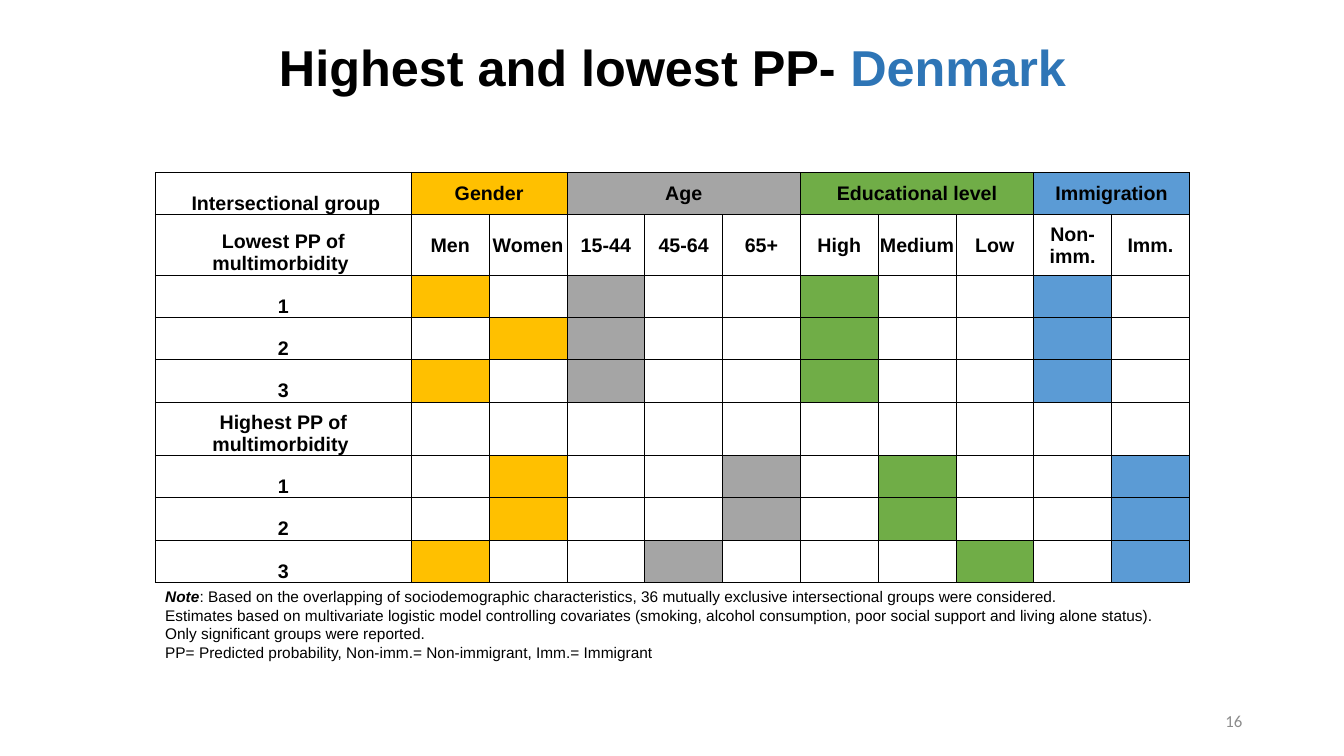
from lxml.etree import SubElement
from pptx import Presentation
from pptx.dml.color import RGBColor
from pptx.enum.text import MSO_ANCHOR, PP_ALIGN
from pptx.oxml.ns import qn
from pptx.util import Inches, Pt

COLOURS = {
    "black": "000000", "white": "FFFFFF", "country": "2E75B6", "number": "8C8C8C",
    "gender": "FFC000", "age": "A5A5A5", "education": "70AD47", "immigration": "5B9BD5",
}
TITLE = [[("Highest and lowest PP- ", {}), ("Denmark", {"colour": "country"})]]
PAGE_NUMBER = [[("16", {})]]
NOTE = [
    [("Note", {"bold": True, "italic": True}),
     (": Based on the overlapping of sociodemographic characteristics, "
      "36 mutually exclusive intersectional groups were considered.", {})],
    [("Estimates based on multivariate logistic model controlling covariates (smoking, "
      "alcohol consumption, poor social support and living alone status).", {})],
    [("Only significant groups were reported.", {})],
    [("PP= Predicted probability, Non-imm.= Non-immigrant, Imm.= Immigrant", {})],
]
CORNER = " Intersectional group"
DIMENSIONS = [
    ("Gender", "gender", ["Men", "Women"]),
    ("Age", "age", ["15-44", "45-64", "65+"]),
    ("Educational level", "education", ["High", "Medium", "Low"]),
    ("Immigration", "immigration", ["Non-imm.", "Imm."]),
]
# Row label, then the levels that describe the group
ROWS = [
    ("Lowest PP of multimorbidity ", ()),
    ("1", ("Men", "15-44", "High", "Non-imm.")),
    ("2", ("Women", "15-44", "High", "Non-imm.")),
    ("3", ("Men", "15-44", "High", "Non-imm.")),
    ("Highest PP of multimorbidity ", ()),
    ("1", ("Women", "65+", "Medium", "Imm.")),
    ("2", ("Women", "65+", "Medium", "Imm.")),
    ("3", ("Men", "45-64", "Low", "Imm.")),
]
LEVELS = [(level, colour) for _, colour, levels in DIMENSIONS for level in levels]

SLIDE_WIDTH, SLIDE_HEIGHT = 13.33, 7.5
LEFT, WIDTH = 1.54, 10.26
TABLE_TOP, LABEL_WIDTH = 1.71, 2.54
LEVEL_WIDTH = (WIDTH - LABEL_WIDTH) / len(LEVELS)
ROW_HEIGHT = 0.42
SECTION_HEIGHTS = {1: 0.6, 5: 0.53}
ROW_HEIGHTS = [SECTION_HEIGHTS.get(row, ROW_HEIGHT) for row in range(len(ROWS) + 1)]


def rgb(name):
    return RGBColor.from_string(COLOURS[name])


def write(frame, paragraphs, size, align=PP_ALIGN.LEFT, font="Arial", colour="black",
          bold=False, spacing=None):
    """Fill a text frame; each run may override colour, bold and italic."""
    for index, runs in enumerate(paragraphs):
        para = frame.add_paragraph() if index else frame.paragraphs[0]
        para.alignment = align
        para.line_spacing = spacing
        for text, look in runs:
            span = para.add_run()
            span.text = text
            span.font.name = font
            span.font.size = Pt(size)
            span.font.bold = look.get("bold", bold)
            span.font.italic = look.get("italic", False)
            span.font.color.rgb = rgb(look.get("colour", colour))


def add_text(page, place, paragraphs, anchor=MSO_ANCHOR.MIDDLE, **look):
    box = page.shapes.add_textbox(*(Inches(length) for length in place))
    box.text_frame.word_wrap = True
    box.text_frame.vertical_anchor = anchor
    write(box.text_frame, paragraphs, **look)


def add_borders(cell):
    properties = cell._tc.get_or_add_tcPr()
    for side in ("a:lnL", "a:lnR", "a:lnT", "a:lnB"):
        line = SubElement(properties, qn(side), w=str(Pt(0.5)))
        fill = SubElement(line, qn("a:solidFill"))
        SubElement(fill, qn("a:srgbClr"), val=COLOURS["black"])


def set_cell(cell, text="", colour="white", anchor=MSO_ANCHOR.MIDDLE):
    cell.fill.solid()
    cell.fill.fore_color.rgb = rgb(colour)
    cell.vertical_anchor = anchor
    cell.margin_left = cell.margin_right = cell.margin_top = Inches(0.01)
    cell.margin_bottom = 0
    if text:
        write(cell.text_frame, [[(text, {})]], size=14, align=PP_ALIGN.CENTER, bold=True)


def add_group_table(page):
    frame = page.shapes.add_table(
        len(ROW_HEIGHTS), len(LEVELS) + 1, Inches(LEFT), Inches(TABLE_TOP),
        Inches(WIDTH), Inches(sum(ROW_HEIGHTS)))
    table = frame.table
    table.first_row = table.horz_banding = False
    for index, column in enumerate(table.columns):
        column.width = Inches(LEVEL_WIDTH if index else LABEL_WIDTH)
    for row, height in zip(table.rows, ROW_HEIGHTS):
        row.height = Inches(height)
    for cell in table.iter_cells():
        add_borders(cell)
        set_cell(cell)

    set_cell(table.cell(0, 0), CORNER, anchor=MSO_ANCHOR.BOTTOM)
    first = 1
    for name, colour, levels in DIMENSIONS:
        last = first + len(levels) - 1
        table.cell(0, first).merge(table.cell(0, last))
        set_cell(table.cell(0, first), name, colour)
        first = last + 1
    for column, (level, _) in enumerate(LEVELS, 1):
        set_cell(table.cell(1, column), level)
    for row, (label, chosen) in enumerate(ROWS, 1):
        set_cell(table.cell(row, 0), label, anchor=MSO_ANCHOR.BOTTOM)
        for column, (level, colour) in enumerate(LEVELS, 1):
            if level in chosen:
                set_cell(table.cell(row, column), colour=colour)


def main():
    deck = Presentation()
    deck.slide_width, deck.slide_height = Inches(SLIDE_WIDTH), Inches(SLIDE_HEIGHT)
    page = deck.slides.add_slide(deck.slide_layouts[6])
    add_text(page, (LEFT, 0.13, WIDTH, 1.13), TITLE, size=36, bold=True,
             align=PP_ALIGN.CENTER, spacing=0.9)
    add_text(page, (9.42, 6.95, 3, 0.4), PAGE_NUMBER, size=12, font="Calibri",
             colour="number", align=PP_ALIGN.RIGHT)
    add_group_table(page)
    add_text(page, (LEFT, TABLE_TOP + sum(ROW_HEIGHTS), WIDTH, 0.84), NOTE, size=11,
             anchor=MSO_ANCHOR.TOP)
    deck.save("out.pptx")


if __name__ == "__main__":
    main()
